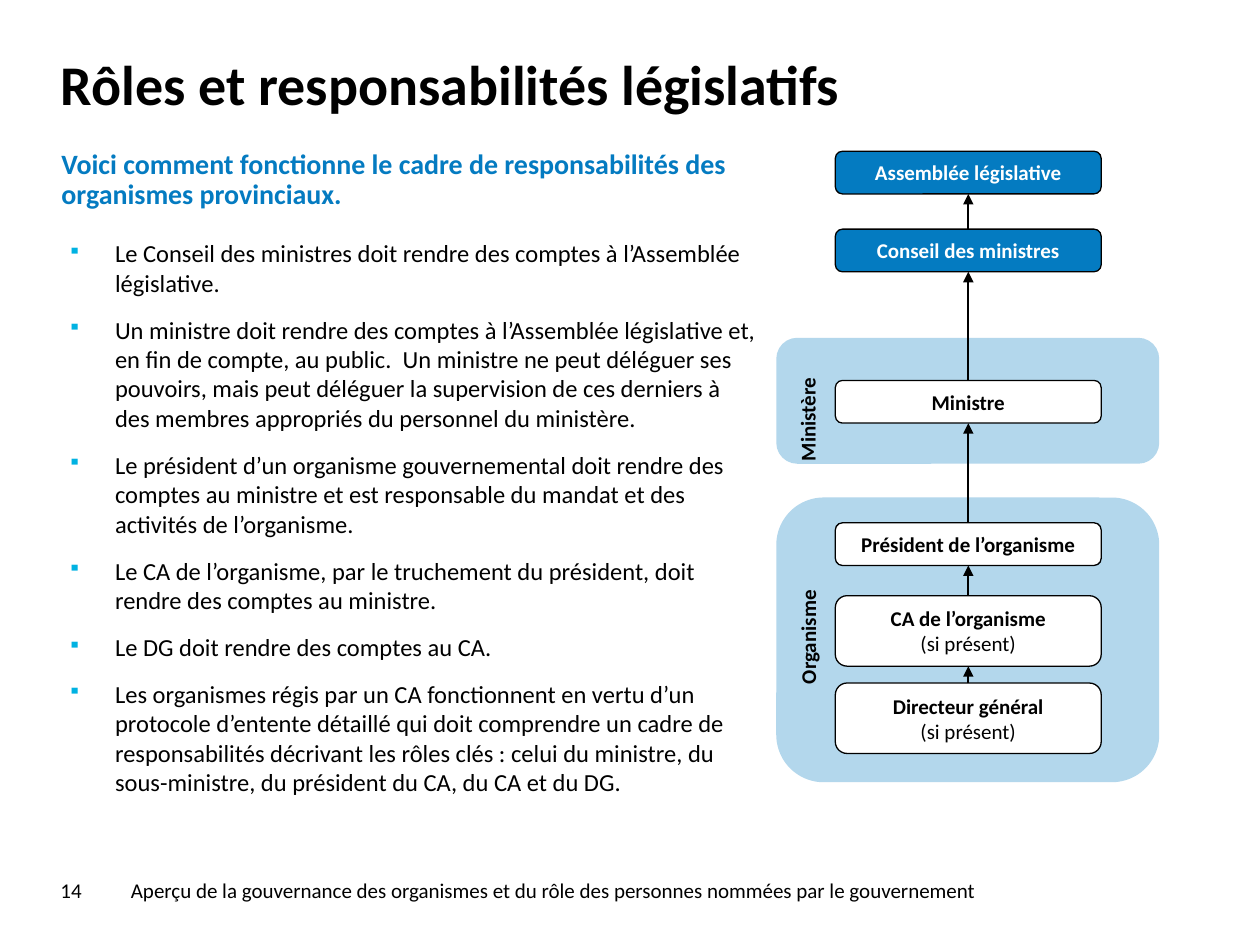
from dataclasses import dataclass

from lxml import etree
from pptx import Presentation
from pptx.dml.color import RGBColor
from pptx.enum.shapes import MSO_CONNECTOR, MSO_SHAPE
from pptx.enum.text import MSO_ANCHOR, MSO_AUTO_SIZE, PP_ALIGN
from pptx.oxml.ns import qn
from pptx.util import Cm, Pt

STRAIGHT = MSO_CONNECTOR.STRAIGHT
ROUNDED = MSO_SHAPE.ROUNDED_RECTANGLE
TOP, MIDDLE = MSO_ANCHOR.TOP, MSO_ANCHOR.MIDDLE
LEFT, CENTER = PP_ALIGN.LEFT, PP_ALIGN.CENTER
TOP_SIDE, BOTTOM_SIDE = 0, 2
TITLE_ONLY = 5


@dataclass(frozen=True)
class Theme:
    font: str = "Calibri"
    black: RGBColor = RGBColor(0x00, 0x00, 0x00)
    white: RGBColor = RGBColor(0xFF, 0xFF, 0xFF)
    blue: RGBColor = RGBColor(0x04, 0x7B, 0xC1)
    pale_blue: RGBColor = RGBColor(0xB3, 0xD7, 0xEC)
    bullet: str = "00B2E2"
    title_size: Pt = Pt(32)
    lead_size: Pt = Pt(16)
    body_size: Pt = Pt(14)
    small_size: Pt = Pt(12)
    outline: Pt = Pt(0.75)
    arrow: Pt = Pt(1.25)


THEME = Theme()

TITLE = "Rôles et responsabilités législatifs"
LEAD = "Voici comment fonctionne le cadre de responsabilités des organismes provinciaux."
BULLETS = [
    "Le Conseil des ministres doit rendre des comptes à l’Assemblée législative.",
    "Un ministre doit rendre des comptes à l’Assemblée législative et, en fin de compte, "
    "au public.  Un ministre ne peut déléguer ses pouvoirs, mais peut déléguer la "
    "supervision de ces derniers à des membres appropriés du personnel du ministère.",
    "Le président d’un organisme gouvernemental doit rendre des comptes au ministre et "
    "est responsable du mandat et des activités de l’organisme.",
    "Le CA de l’organisme, par le truchement du président, doit rendre des comptes "
    "au ministre.",
    "Le DG doit rendre des comptes au CA.",
    "Les organismes régis par un CA fonctionnent en vertu d’un protocole d’entente "
    "détaillé qui doit comprendre un cadre de responsabilités décrivant les rôles clés : "
    "celui du ministre, du sous-ministre, du président du CA, du CA et du DG.",
]
PAGE_NUMBER = "14"
FOOTER = ("Aperçu de la gouvernance des organismes et du rôle des personnes nommées "
          "par le gouvernement")

# Band: top, height. Label: text, then its left, top, width, height. In cm.
BANDS = [
    (3.76, 2.54, "Ministère", (0.08, 3.58, 1.09, 2.92)),
    (6.98, 5.74, "Organisme", (0.23, 8.35, 0.81, 2.64)),
]
# Role: top in cm, lines of text, whether it is part of the legislature.
ROLES = [
    (0, ["Assemblée législative"], True),
    (1.57, ["Conseil des ministres"], True),
    (4.62, ["Ministre"], False),
    (7.49, ["Président de l’organisme"], False),
    (8.96, ["CA de l’organisme", "(si présent)"], False),
    (10.72, ["Directeur général", "(si présent)"], False),
]
ROLE_LEFT, ROLE_WIDTH = 1.19, 5.36
ROLE_HEIGHTS = {1: 0.86, 2: 1.42}


def style(paragraph, size, color=THEME.black, bold=False, alignment=LEFT):
    paragraph.alignment = alignment
    font = paragraph.font
    font.name, font.size, font.bold = THEME.font, size, bold
    font.color.rgb = color


def add_text(slide, box, text, size, anchor=TOP, color=THEME.black, bold=False):
    shape = slide.shapes.add_textbox(*map(Cm, box))
    frame = shape.text_frame
    frame.word_wrap = True
    frame.vertical_anchor = anchor
    frame.text = text
    for paragraph in frame.paragraphs:
        style(paragraph, size, color, bold)
    return frame


def add_rounded(slide, box, fill):
    shape = slide.shapes.add_shape(ROUNDED, *map(Cm, box))
    shape.shadow.inherit = False
    shape.fill.solid()
    shape.fill.fore_color.rgb = fill
    return shape


def add_title(slide, box):
    title = slide.shapes.title
    title.left, title.top, title.width, title.height = map(Cm, box)
    frame = title.text_frame
    frame.text = TITLE
    frame.vertical_anchor = TOP
    frame.auto_size = MSO_AUTO_SIZE.NONE
    paragraph = frame.paragraphs[0]
    paragraph.line_spacing = 0.9
    style(paragraph, THEME.title_size, bold=True)


def add_bullet(paragraph, indent):
    properties = paragraph._p.get_or_add_pPr()
    properties.set("marL", str(indent))
    properties.set("indent", str(-indent))
    color = etree.SubElement(properties, qn("a:buClr"))
    etree.SubElement(color, qn("a:srgbClr"), val=THEME.bullet)
    etree.SubElement(properties, qn("a:buSzPct"), val="75000")
    etree.SubElement(properties, qn("a:buChar"), char="▪")


def add_explanation(slide, box):
    """Place the blue lead sentence and the bulleted list below it."""
    left, top, width, height = box
    lead = add_text(slide, (left, top, width, 2.21), LEAD, THEME.lead_size,
                    color=THEME.blue, bold=True)
    lead.paragraphs[0].line_spacing = 0.9
    body = add_text(slide, (left + 0.13, top + 1.78, width, height - 1.78),
                    "\n".join(BULLETS), THEME.body_size)
    for index, paragraph in enumerate(body.paragraphs):
        add_bullet(paragraph, Cm(0.95))
        if index:
            paragraph.space_before = Pt(10)


def add_band(slide, box, label, label_box):
    add_rounded(slide, box, THEME.pale_blue).line.fill.background()
    frame = add_text(slide, label_box, label, THEME.small_size, MIDDLE, bold=True)
    frame.margin_bottom = Cm(0.25)
    frame._txBody.bodyPr.set("vert", "vert270")


def add_role(slide, box, lines, legislative):
    shape = add_rounded(slide, box, THEME.blue if legislative else THEME.white)
    shape.line.color.rgb = THEME.black
    shape.line.width = THEME.outline
    frame = shape.text_frame
    frame.word_wrap = True
    frame.vertical_anchor = MIDDLE
    frame.text = "\n".join(lines)
    color = THEME.white if legislative else THEME.black
    for index, paragraph in enumerate(frame.paragraphs):
        style(paragraph, THEME.small_size, color, index == 0, CENTER)
    return shape


def add_arrow(slide, lower, upper):
    arrow = slide.shapes.add_connector(STRAIGHT, 0, 0, 0, 0)
    arrow.begin_connect(lower, TOP_SIDE)
    arrow.end_connect(upper, BOTTOM_SIDE)
    arrow.line.color.rgb = THEME.black
    arrow.line.width = THEME.arrow
    etree.SubElement(arrow.line._get_or_add_ln(), qn("a:tailEnd"), type="triangle")
    etree.SubElement(arrow._element.spPr, qn("a:effectLst"))


def add_accountability_chain(slide, box):
    left, top, width, _ = box
    for band_top, height, label, (x, y, label_width, label_height) in BANDS:
        add_band(slide, (left, top + band_top, width, height), label,
                 (left + x, top + y, label_width, label_height))
    roles = [
        add_role(slide, (left + ROLE_LEFT, top + role_top, ROLE_WIDTH,
                         ROLE_HEIGHTS[len(lines)]), lines, legislative)
        for role_top, lines, legislative in ROLES
    ]
    for upper, lower in zip(roles, roles[1:]):
        add_arrow(slide, lower, upper)


def add_footer(slide, box):
    left, top, width, height = box
    number_width = 1.42
    add_text(slide, (left, top, number_width, height), PAGE_NUMBER,
             THEME.small_size, MIDDLE)
    add_text(slide, (left + number_width, top, width - number_width, height), FOOTER,
             THEME.small_size, MIDDLE)


def main():
    presentation = Presentation()
    presentation.slide_width, presentation.slide_height = Cm(25.4), Cm(19.05)
    slide = presentation.slides.add_slide(presentation.slide_layouts[TITLE_ONLY])
    add_title(slide, (0.97, 1.02, 23.5, 2.74))
    add_explanation(slide, (0.99, 2.9, 14.45, 13.54))
    add_accountability_chain(slide, (15.65, 3.05, 7.72, 12.72))
    add_footer(slide, (0.97, 17.44, 19.45, 1.02))
    presentation.save("out.pptx")


if __name__ == "__main__":
    main()
